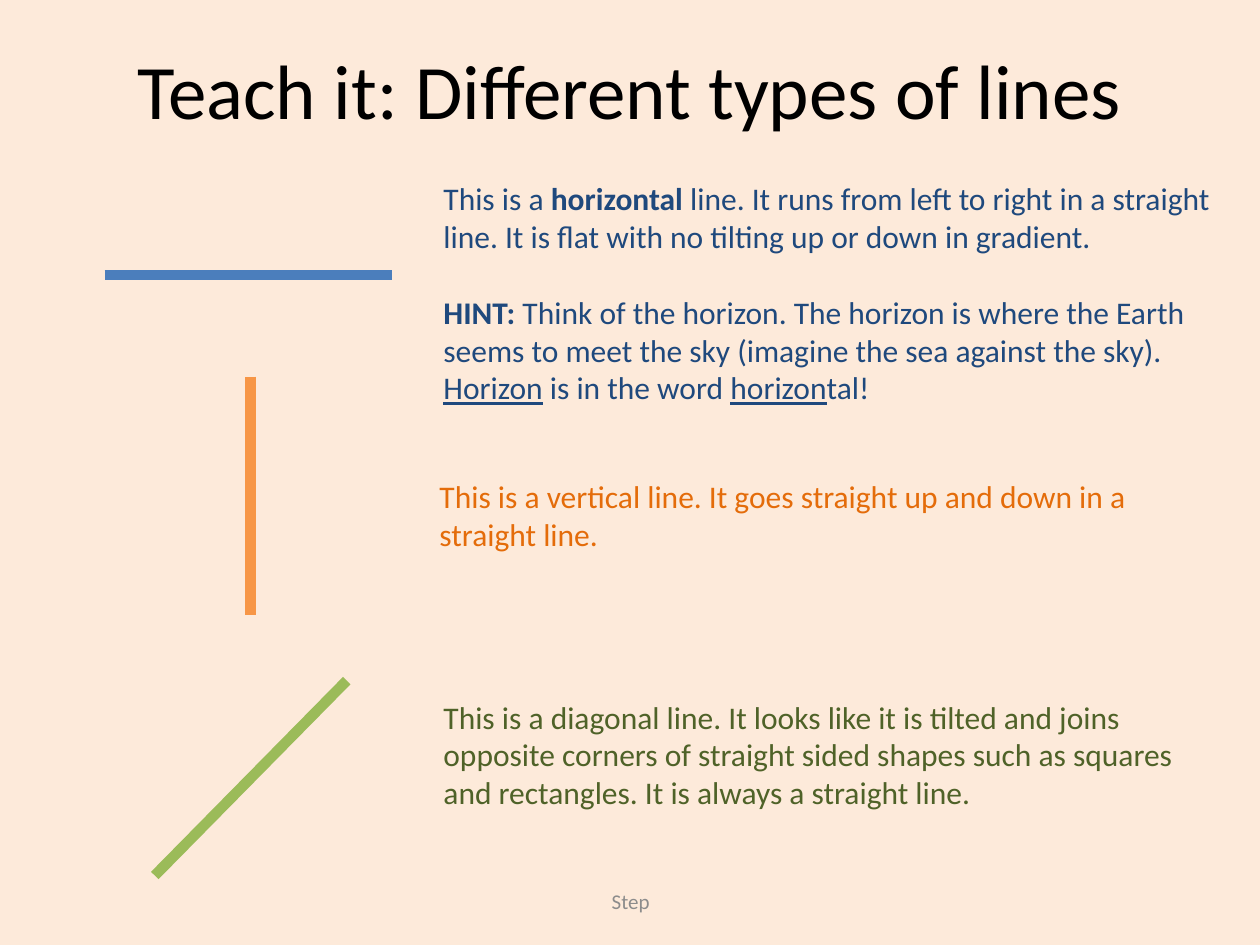
from lxml.etree import SubElement
from pptx import Presentation
from pptx.dml.color import RGBColor
from pptx.enum.shapes import MSO_CONNECTOR
from pptx.enum.text import MSO_ANCHOR, PP_ALIGN
from pptx.oxml.ns import qn
from pptx.util import Cm, Pt

CREAM = RGBColor(0xFD, 0xEA, 0xDA)
BLACK = RGBColor(0x00, 0x00, 0x00)
GREY = RGBColor(0x8C, 0x8C, 0x8C)
BLUE, NAVY = RGBColor(0x4B, 0x7E, 0xBC), RGBColor(0x1F, 0x49, 0x7D)
ORANGE, DARK_ORANGE = RGBColor(0xF7, 0x96, 0x46), RGBColor(0xE4, 0x6C, 0x0A)
GREEN, DARK_GREEN = RGBColor(0x9B, 0xBB, 0x59), RGBColor(0x4F, 0x62, 0x28)

# Content: paragraphs are lists of (text, style), style "b" bold or "u" underlined
TITLE = [[("Teach it: Different types of lines", "")]]
FOOTER = [[("Step", "")]]
HORIZONTAL = [
    [("This is a ", ""), ("horizontal", "b"),
     (" line. It runs from left to right in a straight line. "
      "It is flat with no tilting up or down in gradient.", "")],
    [("HINT:", "b"),
     (" Think of the horizon. The horizon is where the Earth seems to meet "
      "the sky (imagine the sea against the sky). ", ""),
     ("Horizon", "u"), (" is in the word ", ""), ("horizon", "u"), ("tal!", "")],
]
VERTICAL = [[("This is a vertical line. It goes straight up and down "
              "in a straight line.", "")]]
DIAGONAL = [[("This is a diagonal line. It looks like it is tilted and joins "
              "opposite corners of straight sided shapes such as squares and "
              "rectangles. It is always a straight line.", "")]]

# Line ends (x1, y1, x2, y2) and text boxes (left, top, width, height), in cm
LINE_TYPES = [
    ((2.11, 5.54, 7.9, 5.54), BLUE, (8.69, 3.48, 16.2, 4.88), NAVY, HORIZONTAL),
    ((5.05, 7.59, 5.05, 12.4), ORANGE, (8.61, 9.5, 16.2, 1.8), DARK_ORANGE, VERTICAL),
    ((6.99, 13.72, 3.12, 17.65), GREEN, (8.69, 13.94, 16.2, 2.57), DARK_GREEN, DIAGONAL),
]


def add_text(s, box, paragraphs, size, color, align=PP_ALIGN.LEFT, anchor=MSO_ANCHOR.TOP):
    tf = s.shapes.add_textbox(*map(Cm, box)).text_frame
    tf.word_wrap = True
    tf.vertical_anchor = anchor
    for i, runs in enumerate(paragraphs):
        p = tf.add_paragraph() if i else tf.paragraphs[0]
        p.alignment = align
        if i:
            p.space_before = Pt(22)
        for text, style in runs:
            r = p.add_run()
            r.text = text
            r.font.name = "Calibri"
            r.font.size = Pt(size)
            r.font.color.rgb = color
            r.font.bold = style == "b"
            r.font.underline = style == "u"


def add_line(s, ends, color):
    line = s.shapes.add_connector(MSO_CONNECTOR.STRAIGHT, *map(Cm, ends))
    line.line.color.rgb = color
    line.line.width = Pt(6)
    SubElement(line._element.spPr, qn("a:effectLst"))


prs = Presentation()
prs.slide_width, prs.slide_height = Cm(25.4), Cm(19.05)
s = prs.slides.add_slide(prs.slide_layouts[6])
s.background.fill.solid()
s.background.fill.fore_color.rgb = CREAM

# Title and footer
add_text(s, (1.27, 0.2, 22.86, 3.18), TITLE, 44, BLACK, PP_ALIGN.CENTER, MSO_ANCHOR.MIDDLE)
add_text(s, (8.69, 17.65, 8.05, 1.02), FOOTER, 12, GREY, PP_ALIGN.CENTER, MSO_ANCHOR.MIDDLE)

# Each type of line with its explanation
for ends, line_color, box, text_color, paragraphs in LINE_TYPES:
    add_line(s, ends, line_color)
    add_text(s, box, paragraphs, 18, text_color)

prs.save("out.pptx")
